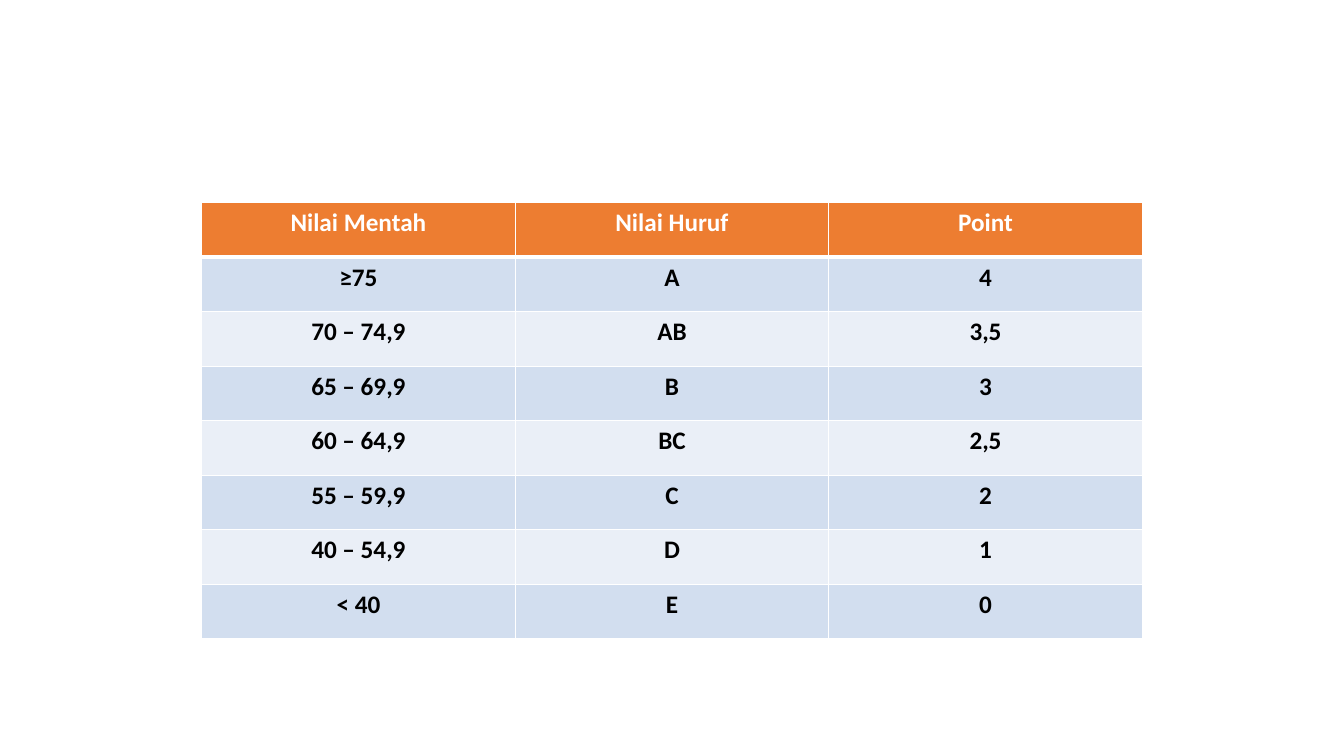
import lxml.etree
import pptx
import pptx.dml.color
import pptx.enum.text
import pptx.oxml.ns
import pptx.util

Inches = pptx.util.Inches
COLORS = {
    "header": "ED7D31",
    "odd": "D2DEEF",
    "even": "EAEFF7",
    "white": "FFFFFF",
    "black": "000000",
}
GRADES = [
    ("Nilai Mentah", "Nilai Huruf", "Point"),
    ("≥75", "A", "4"),
    ("70 – 74,9", "AB", "3,5"),
    ("65 – 69,9", "B", "3"),
    ("60 – 64,9", "BC", "2,5"),
    ("55 – 59,9", "C", "2"),
    ("40 – 54,9", "D", "1"),
    ("< 40", "E", "0"),
]


def write_text(frame, text, size=18, color="black", bold=True, font="Calibri"):
    para = frame.paragraphs[0]
    para.alignment = pptx.enum.text.PP_ALIGN.CENTER
    span = para.add_run()
    span.text = text
    span.font.name = font
    span.font.size = pptx.util.Pt(size)
    span.font.bold = bold
    span.font.color.rgb = pptx.dml.color.RGBColor.from_string(COLORS[color])


def add_border(cell, side, width):
    """Draw a white line of the given point width on side L, R, T or B."""
    qn = pptx.oxml.ns.qn
    properties = cell._tc.get_or_add_tcPr()
    line = lxml.etree.SubElement(properties, qn(f"a:ln{side}"), w=str(pptx.util.Pt(width)))
    fill = lxml.etree.SubElement(line, qn("a:solidFill"))
    lxml.etree.SubElement(fill, qn("a:srgbClr"), val=COLORS["white"])


deck = pptx.Presentation()
deck.slide_width = Inches(13.33)
deck.slide_height = Inches(7.5)
page = deck.slides.add_slide(deck.slide_layouts[6])

frame = page.shapes.add_table(
    len(GRADES), len(GRADES[0]), Inches(2), Inches(2.01), Inches(9.33), Inches(4.33)
)
table = frame.table
for column in table.columns:
    column.width = Inches(3.11)

for row_index, grade in enumerate(GRADES):
    is_header = row_index == 0
    band = "header" if is_header else "odd" if row_index % 2 else "even"
    for column_index, text in enumerate(grade):
        cell = table.cell(row_index, column_index)
        write_text(cell.text_frame, text, color="white" if is_header else "black")
        for side in "LRTB":
            under_header = (row_index, side) in [(0, "B"), (1, "T")]
            add_border(cell, side, 3 if under_header else 1)
        cell.fill.solid()
        cell.fill.fore_color.rgb = pptx.dml.color.RGBColor.from_string(COLORS[band])

deck.save("out.pptx")
